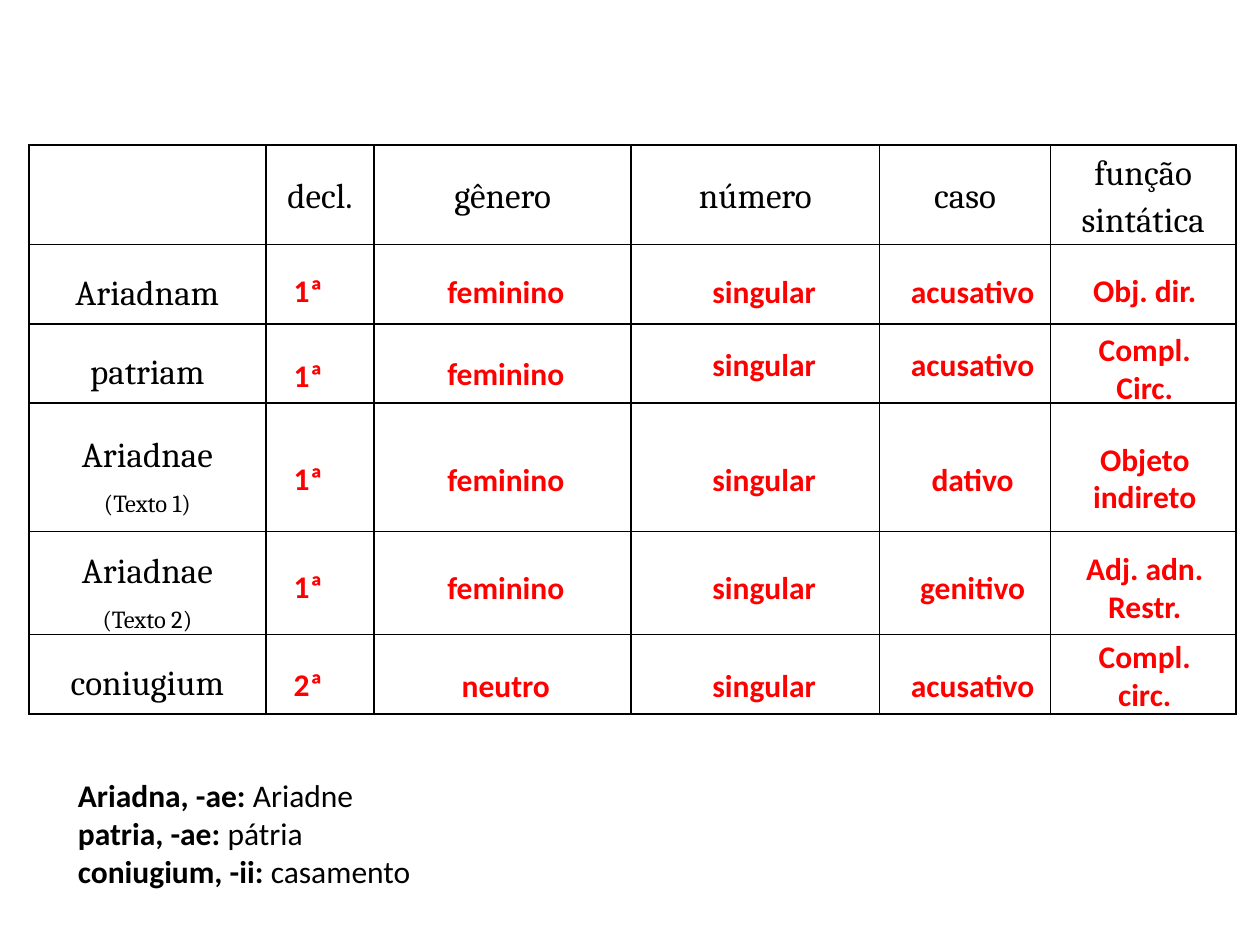
from lxml import etree
from pptx import Presentation
from pptx.dml.color import RGBColor
from pptx.enum.text import MSO_ANCHOR, MSO_AUTO_SIZE, PP_ALIGN
from pptx.oxml.ns import qn
from pptx.util import Inches, Pt

CENTER, LEFT = PP_ALIGN.CENTER, PP_ALIGN.LEFT
MIDDLE = MSO_ANCHOR.MIDDLE
GROW = MSO_AUTO_SIZE.SHAPE_TO_FIT_TEXT

COLORS = {"text": "000000", "answer": "FF0000", "border": "000000"}

HEADERS = ["", "decl.", "gênero", "número", "caso", "função sintática"]
WORDS = [
    ["Ariadnam"],
    ["patriam"],
    ["Ariadnae", "(Texto 1)"],
    ["Ariadnae", "(Texto 2)"],
    ["coniugium"],
]
ANSWERS = [
    ["1ª", "feminino", "singular", "acusativo", "Obj. dir."],
    ["1ª", "feminino", "singular", "acusativo", "Compl. Circ."],
    ["1ª", "feminino", "singular", "dativo", "Objeto indireto"],
    ["1ª", "feminino", "singular", "genitivo", "Adj. adn. Restr."],
    ["2ª", "neutro", "singular", "acusativo", "Compl. circ."],
]
GLOSSARY = [
    ("Ariadna, -ae: ", "Ariadne"),
    ("patria, -ae: ", "pátria"),
    ("coniugium, -ii: ", "casamento"),
]

COLUMN_WIDTHS = [1.88, 0.86, 2.04, 1.97, 1.36, 1.47]
ROW_HEIGHTS = [0.79, 0.63, 0.63, 1.02, 0.71, 0.63]
ANSWER_COLUMNS = [(2.09, 0.71), (3.11, 1.81), (5.16, 1.81), (7.05, 1.34), (8.39, 1.39)]
ANSWER_TOPS = [
    [2.1, 2.11, 2.11, 2.11, 2.1],
    [2.78, 2.76, 2.69, 2.69, 2.57],
    [3.59, 3.6, 3.6, 3.6, 3.44],
    [4.45, 4.46, 4.46, 4.46, 4.31],
    [5.23, 5.24, 5.24, 5.24, 5.01],
]
ONE_LINE, TWO_LINES = 0.4, 0.71


def add_run(paragraph, text, font, size, color, bold=False):
    run = paragraph.add_run()
    run.text = text
    run.font.name = font
    run.font.size = Pt(size)
    run.font.bold = bold
    run.font.color.rgb = RGBColor.from_string(color)


def write_paragraphs(frame, paragraphs, align, spacing=None):
    for index, runs in enumerate(paragraphs):
        paragraph = frame.add_paragraph() if index else frame.paragraphs[0]
        paragraph.alignment = align
        paragraph.line_spacing = spacing
        for run in runs:
            add_run(paragraph, *run)


def draw_borders(cell):
    properties = cell._tc.get_or_add_tcPr()
    for position, side in enumerate(("a:lnL", "a:lnR", "a:lnT", "a:lnB")):
        line = etree.Element(qn(side), w=str(Pt(1)))
        fill = etree.SubElement(line, qn("a:solidFill"))
        etree.SubElement(fill, qn("a:srgbClr"), val=COLORS["border"])
        properties.insert(position, line)


def fill_cell(cell, lines, spacing):
    cell.fill.background()
    cell.vertical_anchor = MIDDLE
    cell.margin_left = cell.margin_right = Inches(0.07)
    cell.margin_top = cell.margin_bottom = 0
    draw_borders(cell)
    paragraphs = [
        [(line, "Cambria", 14 if index else 20, COLORS["text"])]
        for index, line in enumerate(lines) if line
    ]
    write_paragraphs(cell.text_frame, paragraphs, CENTER, spacing)


def add_declension_table(slide):
    table = slide.shapes.add_table(
        len(ROW_HEIGHTS), len(COLUMN_WIDTHS), Inches(0.23), Inches(1.15),
        Inches(sum(COLUMN_WIDTHS)), Inches(sum(ROW_HEIGHTS)),
    ).table
    table.first_row = table.horz_banding = False
    for column, width in zip(table.columns, COLUMN_WIDTHS):
        column.width = Inches(width)
    for row, height in zip(table.rows, ROW_HEIGHTS):
        row.height = Inches(height)
    blanks = [[]] * (len(HEADERS) - 1)
    rows = [[[header] for header in HEADERS]] + [[word] + blanks for word in WORDS]
    for r, row in enumerate(rows):
        for c, lines in enumerate(row):
            fill_cell(table.cell(r, c), lines, 1.5 if r else 1.15)


def add_text(slide, left, top, width, height, paragraphs, align):
    box = slide.shapes.add_textbox(Inches(left), Inches(top), Inches(width), Inches(height))
    box.text_frame.word_wrap = True
    box.text_frame.auto_size = GROW
    write_paragraphs(box.text_frame, paragraphs, align)


def main():
    """Build the slide with the Latin declension table, its answers and the glossary."""
    presentation = Presentation()
    presentation.slide_width, presentation.slide_height = Inches(10), Inches(7.5)
    slide = presentation.slides.add_slide(presentation.slide_layouts[6])
    add_declension_table(slide)
    for answers, tops in zip(ANSWERS, ANSWER_TOPS):
        for answer, top, (left, width) in zip(answers, tops, ANSWER_COLUMNS):
            height = TWO_LINES if len(answer) > 10 else ONE_LINE
            runs = [(answer, "Calibri", 18, COLORS["answer"], True)]
            add_text(slide, left, top, width, height, [runs], CENTER)
    entries = [
        [(term, "Calibri", 18, COLORS["text"], True), (meaning, "Calibri", 18, COLORS["text"])]
        for term, meaning in GLOSSARY
    ]
    add_text(slide, 0.52, 6.11, 9.21, 1.01, entries, LEFT)
    presentation.save("out.pptx")


if __name__ == "__main__":
    main()
